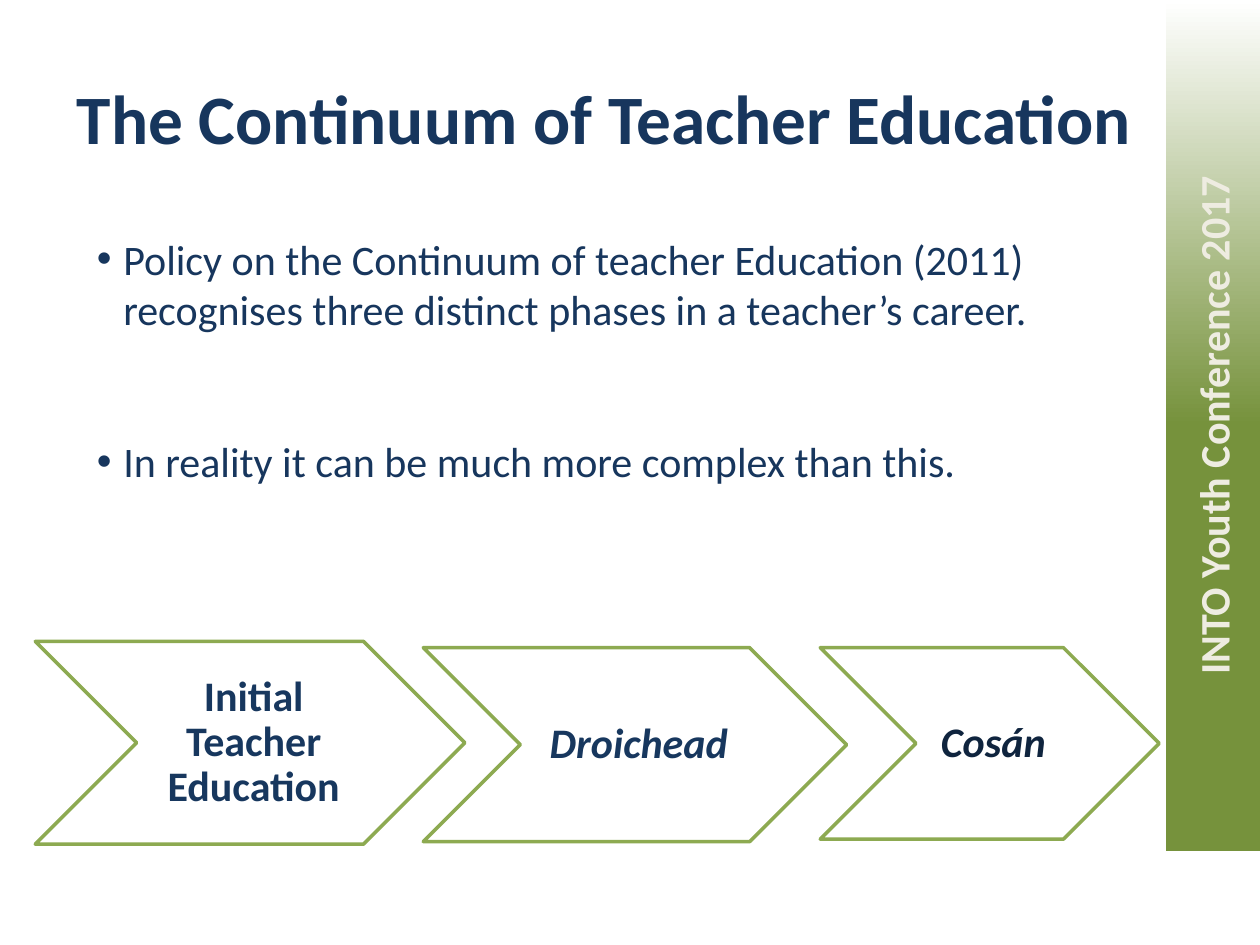
"""Build the slide on the continuum of teacher education."""
from lxml import etree
from pptx import Presentation
from pptx.dml.color import RGBColor
from pptx.enum.shapes import MSO_SHAPE
from pptx.enum.text import MSO_ANCHOR, PP_ALIGN
from pptx.oxml.ns import qn
from pptx.util import Inches, Pt

RECTANGLE = MSO_SHAPE.RECTANGLE
CHEVRON = MSO_SHAPE.CHEVRON
CENTER = PP_ALIGN.CENTER
LEFT = PP_ALIGN.LEFT
TOP = MSO_ANCHOR.TOP
MIDDLE = MSO_ANCHOR.MIDDLE

NAVY = RGBColor(0x17, 0x36, 0x5D)
STEP_NAVY = RGBColor(0x17, 0x37, 0x5E)
DARK_NAVY = RGBColor(0x0F, 0x24, 0x3E)
OLIVE = RGBColor(0x76, 0x92, 0x3C)
LEAF = RGBColor(0x8D, 0xAA, 0x51)
CREAM = RGBColor(0xEE, 0xEC, 0xE1)
WHITE = RGBColor(0xFF, 0xFF, 0xFF)

EVEN_INSETS = (0.1, 0.1, 0.1, 0.1)
STEP_INSETS = (0.1, 0.04, 0.04, 0.04)


class SlideBuilder:
    """Hold the text style and the slide being built."""

    def __init__(self, slide):
        self.slide = slide
        self.style = {"name": "Calibri", "size": Pt(24), "bold": False, "italic": False}

    def fill_paragraph(self, paragraph, wording, color, **changes):
        paragraph.text = wording
        font = paragraph.runs[0].font
        for attribute, value in {**self.style, **changes}.items():
            setattr(font, attribute, value)
        font.color.rgb = color

    def frame(self, holder, insets, anchor):
        frame = holder.text_frame
        sides = ("margin_left", "margin_top", "margin_right", "margin_bottom")
        settings = dict(zip(sides, map(Inches, insets)))
        settings.update(word_wrap=True, vertical_anchor=anchor)
        for attribute, value in settings.items():
            setattr(frame, attribute, value)
        return frame

    def text(self, bounds, wording, color, insets=EVEN_INSETS, spacing=1.0, **changes):
        box = self.slide.shapes.add_textbox(*map(Inches, bounds))
        paragraph = self.frame(box, insets, MIDDLE).paragraphs[0]
        paragraph.alignment = CENTER
        paragraph.line_spacing = spacing
        self.fill_paragraph(paragraph, wording, color, **changes)

    def bullets(self, bounds, points, color, gap):
        box = self.slide.shapes.add_textbox(*map(Inches, bounds))
        frame = self.frame(box, EVEN_INSETS, TOP)
        for index, point in enumerate(points):
            paragraph = frame.add_paragraph() if index else frame.paragraphs[0]
            properties = paragraph._p.get_or_add_pPr()
            properties.set("marL", str(Inches(0.38)))
            properties.set("indent", str(Inches(-0.21)))
            bullet_color = etree.SubElement(properties, qn("a:buClr"))
            etree.SubElement(bullet_color, qn("a:srgbClr"), val=str(color))
            etree.SubElement(properties, qn("a:buFont"), typeface="Arial")
            etree.SubElement(properties, qn("a:buChar"), char="•")
            paragraph.alignment = LEFT
            if index:
                paragraph.space_before = gap
            self.fill_paragraph(paragraph, point, color)

    def banner(self, bounds, wording):
        banner = self.slide.shapes.add_shape(RECTANGLE, *map(Inches, bounds))
        banner.rotation = 270
        banner.shadow.inherit = False
        banner.line.fill.background()
        banner.fill.gradient()
        banner.fill.gradient_angle = 0
        stops = zip(banner.fill.gradient_stops, (0.5, 1.0), (OLIVE, WHITE))
        for stop, position, color in stops:
            stop.position = position
            stop.color.rgb = color
        paragraph = self.frame(banner, EVEN_INSETS, MIDDLE).paragraphs[0]
        paragraph.alignment = CENTER
        self.fill_paragraph(paragraph, wording, CREAM, bold=True)

    def step(self, bounds, wording, color, italic):
        left, top, width, height = bounds
        chevron = self.slide.shapes.add_shape(CHEVRON, *map(Inches, bounds))
        chevron.shadow.inherit = False
        chevron.fill.solid()
        chevron.fill.fore_color.rgb = WHITE
        chevron.line.color.rgb = LEAF
        chevron.line.width = Pt(2)
        label = (left + height / 2, top, width - height, height)
        self.text(label, wording, color, STEP_INSETS, 0.9, bold=True, italic=italic)


def main():
    deck = Presentation()
    deck.slide_width, deck.slide_height = Inches(10), Inches(7.5)
    builder = SlideBuilder(deck.slides.add_slide(deck.slide_layouts[6]))

    builder.banner((6.25, 3, 6.75, 0.75), "INTO Youth Conference 2017")
    builder.text((0.5, 0.3, 8.59, 1.25), "The Continuum of Teacher Education", NAVY,
                 size=Pt(39.6), bold=True)
    policy_points = (
        "Policy on the Continuum of teacher Education (2011) recognises three "
        "distinct phases in a teacher’s career.",
        "In reality it can be much more complex than this.",
    )
    builder.bullets((0.5, 1.75, 8.59, 4.95), policy_points, NAVY, Pt(58))

    career_phases = (
        ((0.28, 5.09, 3.41, 1.61), "Initial Teacher Education", STEP_NAVY, False),
        ((3.36, 5.14, 3.36, 1.54), "Droichead", STEP_NAVY, True),
        ((6.51, 5.14, 2.69, 1.52), "Cosán", DARK_NAVY, True),
    )
    for phase in career_phases:
        builder.step(*phase)
    deck.save("out.pptx")


if __name__ == "__main__":
    main()
